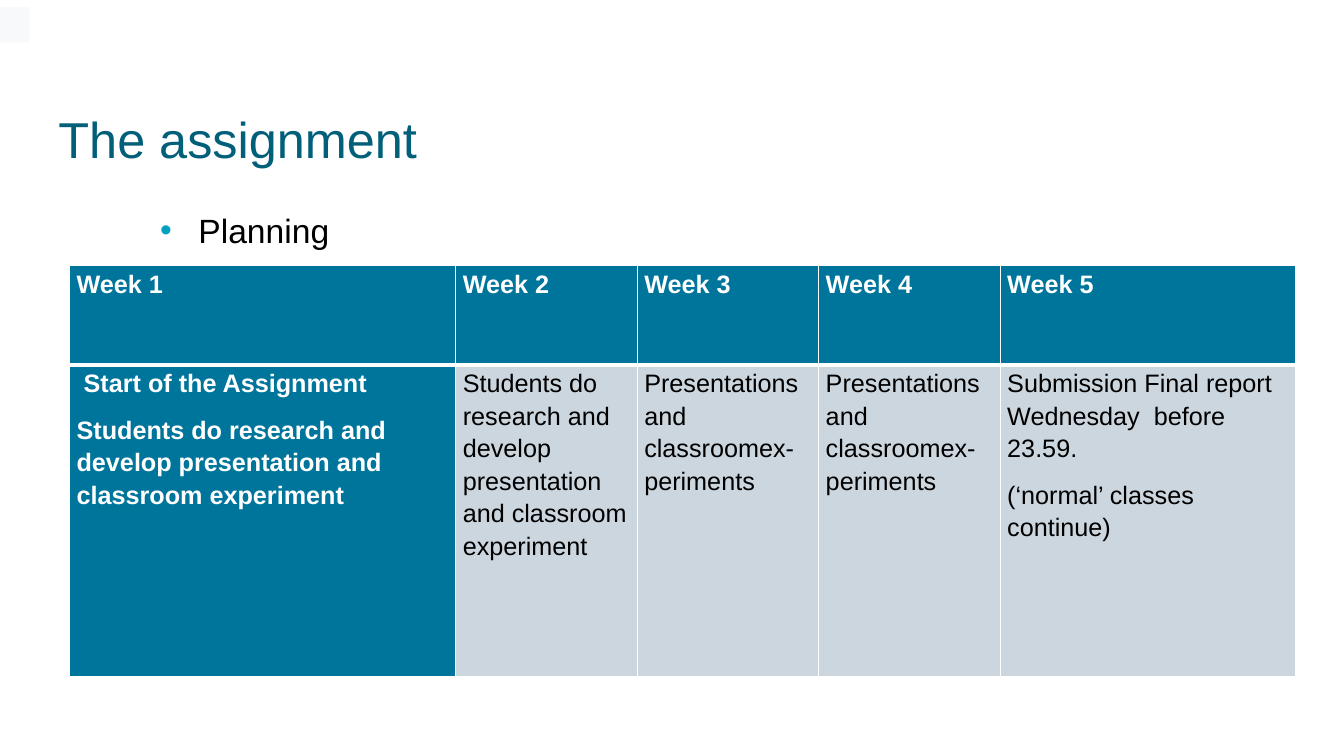
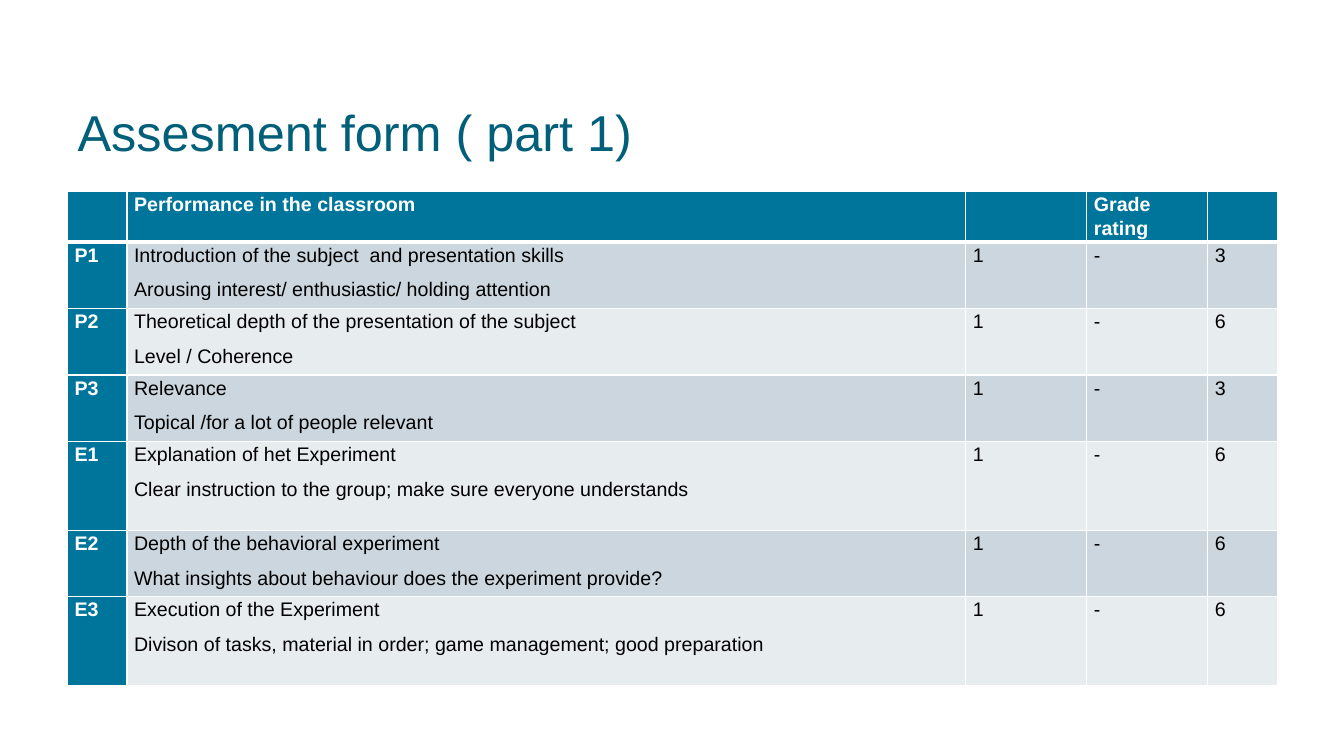
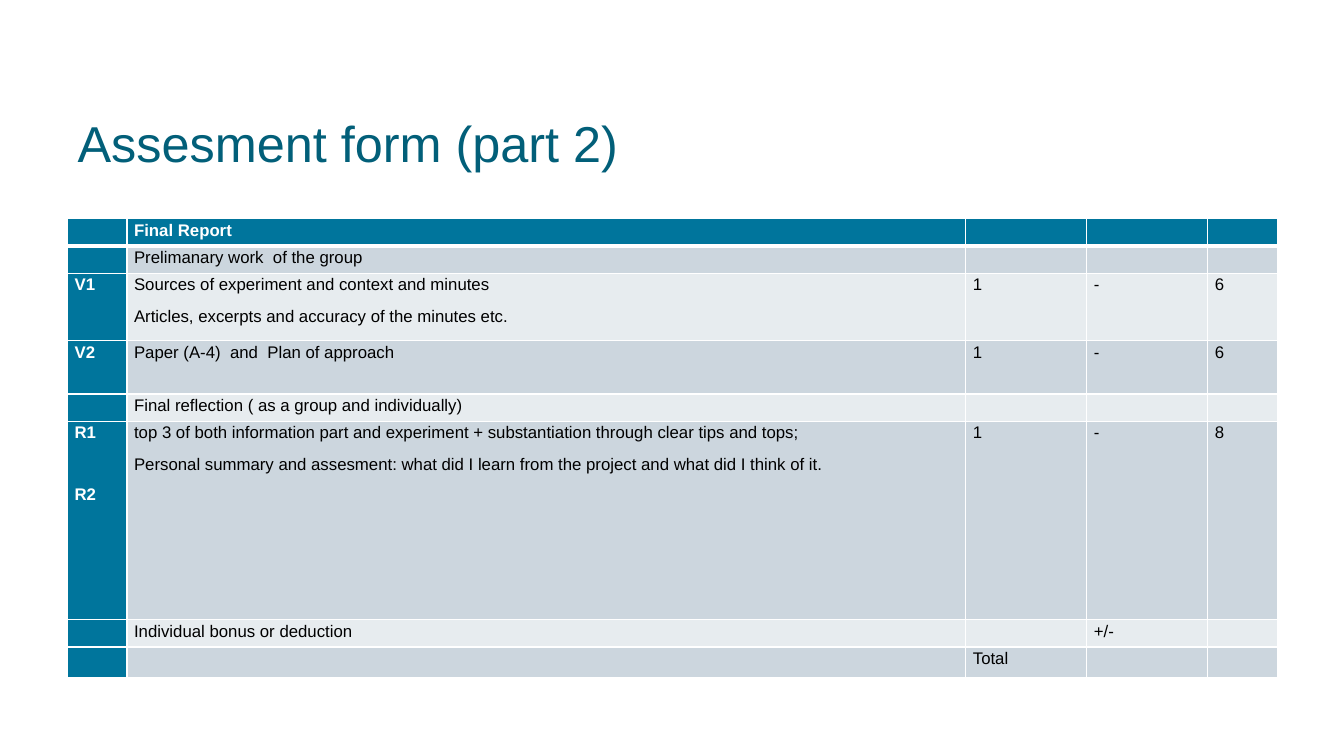
import pptx
import pptx.dml.color
import pptx.enum.shapes
import pptx.enum.text
import pptx.oxml
import pptx.oxml.ns
import pptx.util
from lxml import etree

# Shared look
PX = 9144  # one px is a hundredth of an inch
FONT = "Arial"
TITLE, ACCENT, BULLET = "025F79", "00759C", "00A1C0"
WHITE, BLACK, CORNER = "FFFFFF", "000000", "F8F9FA"
BANDS = ["CCD6DE", "E7ECEF"]
TITLE_FRAME = {"word_wrap": True,
               "auto_size": pptx.enum.text.MSO_AUTO_SIZE.NONE,
               "vertical_anchor": pptx.enum.text.MSO_ANCHOR.MIDDLE}
CELL_MARGINS = {"margin_left": 7, "margin_top": 1, "margin_right": 7, "margin_bottom": 0}
FORM_COLS = [59, 832, 120, 120, 69]

# Content: each row is its height, then its cells; a line break starts a paragraph
PLANNING_COLS = [383, 180, 180, 180, 293]
PLANNING = [
    (99, "Week 1", "Week 2", "Week 3", "Week 4", "Week 5"),
    (309,
     "Start of the Assignment\n"
     "Students do research and develop presentation and classroom experiment",
     "Students do research and develop presentation and classroom experiment",
     "Presentations and classroomex-periments",
     "Presentations and classroomex-periments",
     "Submission Final report Wednesday  before 23.59.\n(‘normal’ classes continue)"),
]
PERFORMANCE = [
    (50, "", "Performance in the classroom", "", "Grade rating", ""),
    (66, "P1", "Introduction of the subject  and presentation skills\n"
     "Arousing interest/ enthusiastic/ holding attention", "1", "-", "3"),
    (66, "P2", "Theoretical depth of the presentation of the subject\n"
     "Level / Coherence", "1", "-", "6"),
    (66, "P3", "Relevance\nTopical /for a lot of people relevant", "1", "-", "3"),
    (88, "E1", "Explanation of het Experiment\n"
     "Clear instruction to the group; make sure everyone understands", "1", "-", "6"),
    (66, "E2", "Depth of the behavioral experiment\n"
     "What insights about behaviour does the experiment provide?", "1", "-", "6"),
    (88, "E3", "Execution of the Experiment\n"
     "Divison of tasks, material in order; game management; good preparation",
     "1", "-", "6"),
]
REPORT = [
    (27, "", "Final Report", "", "", ""),
    (27, "", "Prelimanary work  of the group", "", "", ""),
    (67, "V1", "Sources of experiment and context and minutes\n"
     "Articles, excerpts and accuracy of the minutes etc.", "1", "-", "6"),
    (53, "V2", "Paper (A-4)  and  Plan of approach", "1", "-", "6"),
    (27, "", "Final reflection ( as a group and individually)", "", "", ""),
    (197, "R1\nR2", "top 3 of both information part and experiment + substantiation "
     "through clear tips and tops;\n"
     "Personal summary and assesment: what did I learn from the project and "
     "what did I think of it.", "1", "-", "8"),
    (27, "", "Individual bonus or deduction", "", "+/-", ""),
    (30, "", "", "Total", "", ""),
]


def px(n):
    return pptx.util.Emu(n * PX)


def rgb(color):
    return pptx.dml.color.RGBColor.from_string(color)


def apply(obj, values):
    for name, value in values.items():
        setattr(obj, name, value)


def add_run(p, text, size, color, bold=False):
    r = p.add_run()
    r.text = text
    apply(r.font, {"name": FONT, "size": pptx.util.Pt(size), "bold": bold})
    r.font.color.rgb = rgb(color)


def add_xml(parent, xml):
    head, rest = xml.split(" ", 1)
    parent.append(pptx.oxml.parse_xml(f"{head} {pptx.oxml.ns.nsdecls('a')} {rest}"))


def add_slide(prs, title, left, top, height):
    s = prs.slides.add_slide(prs.slide_layouts[5])
    sp = s.shapes.title
    apply(sp, {"left": px(left), "top": px(top), "width": px(1200), "height": px(height)})
    tf = sp.text_frame
    apply(tf, TITLE_FRAME)
    p = tf.paragraphs[0]
    p.alignment = pptx.enum.text.PP_ALIGN.LEFT
    add_run(p, title, 36, TITLE)
    return s


def add_bullet(s, text, left, top, width, height):
    tf = s.shapes.add_textbox(*map(px, (left, top, width, height))).text_frame
    tf.word_wrap = True
    p = tf.paragraphs[0]
    pPr = p._p.get_or_add_pPr()
    pPr.set("marL", str(px(38)))
    pPr.set("indent", str(px(-38)))
    add_xml(pPr, f'<a:buClr ><a:srgbClr val="{BULLET}"/></a:buClr>')
    add_xml(pPr, f'<a:buFont typeface="{FONT}"/>')
    add_xml(pPr, '<a:buChar char="•"/>')
    add_run(p, text, 24, BLACK)


def add_block(s, color, left, top, width, height):
    sp = s.shapes.add_shape(pptx.enum.shapes.MSO_SHAPE.RECTANGLE,
                            *map(px, (left, top, width, height)))
    sp.shadow.inherit = False
    sp.fill.solid()
    sp.fill.fore_color.rgb = rgb(color)
    sp.line.fill.background()


def set_borders(cell, widths):
    tcPr = cell._tc.get_or_add_tcPr()
    for side, width in widths.items():
        add_xml(tcPr, f'<a:ln{side} w="{pptx.util.Pt(width)}"><a:solidFill>'
                      f'<a:srgbClr val="{WHITE}"/></a:solidFill></a:ln{side}>')


def fill_cell(cell, text, row, col, size, line, after):
    head = row == 0 or col == 0
    # The rule under the header row is thicker
    set_borders(cell, {"L": 1, "R": 1, "T": 3 if row == 1 else 1, "B": 3 if row == 0 else 1})
    cell.fill.solid()
    cell.fill.fore_color.rgb = rgb(ACCENT if head else BANDS[(row - 1) % 2])
    apply(cell, {name: px(n) for name, n in CELL_MARGINS.items()})
    tf = cell.text_frame
    for i, words in enumerate(text.split("\n")):
        p = tf.add_paragraph() if i else tf.paragraphs[0]
        apply(p, {"line_spacing": line, "space_after": pptx.util.Pt(after)})
        if words:
            add_run(p, words, size, WHITE if head else BLACK, head)
        else:  # keeps empty cells from growing their row
            etree.SubElement(p._p, pptx.oxml.ns.qn("a:endParaRPr"), sz=str(size * 100))


def add_grid(s, rows, cols, left, top, size, line=1.07, after=8):
    height = sum(row[0] for row in rows)
    tbl = s.shapes.add_table(len(rows), len(cols),
                             *map(px, (left, top, sum(cols), height))).table
    tbl.first_col = True
    for col, width in zip(tbl.columns, cols):
        col.width = px(width)
    for i, (row_height, *texts) in enumerate(rows):
        tbl.rows[i].height = px(row_height)
        for j, text in enumerate(texts):
            fill_cell(tbl.cell(i, j), text, i, j, size, line, after)
    return tbl


def main():
    prs = pptx.Presentation()
    apply(prs, {"slide_width": px(1333), "slide_height": px(750)})

    # Planning
    s = add_slide(prs, "The assignment", 48, 79, 116)
    add_bullet(s, "Planning", 149, 203, 1040, 492)
    add_block(s, CORNER, 0, 7, 29, 35)
    tbl = add_grid(s, PLANNING, PLANNING_COLS, 69, 263, 18, 1.15, 10)
    start = tbl.cell(1, 0).text_frame.paragraphs[0]
    start._p.get_or_add_pPr().set("marL", str(px(7)))

    # Assessment of the classroom part
    s = add_slide(prs, "Assesment form ( part 1)", 67, 80, 100)
    add_grid(s, PERFORMANCE, FORM_COLS, 67, 190, 14)

    # Assessment of the report
    s = add_slide(prs, "Assesment form (part 2)", 67, 80, 123)
    tbl = add_grid(s, REPORT, FORM_COLS, 67, 217, 12)
    tbl.cell(5, 0).text_frame.paragraphs[1].space_before = pptx.util.Pt(22)

    prs.save("out.pptx")


if __name__ == "__main__":
    main()
